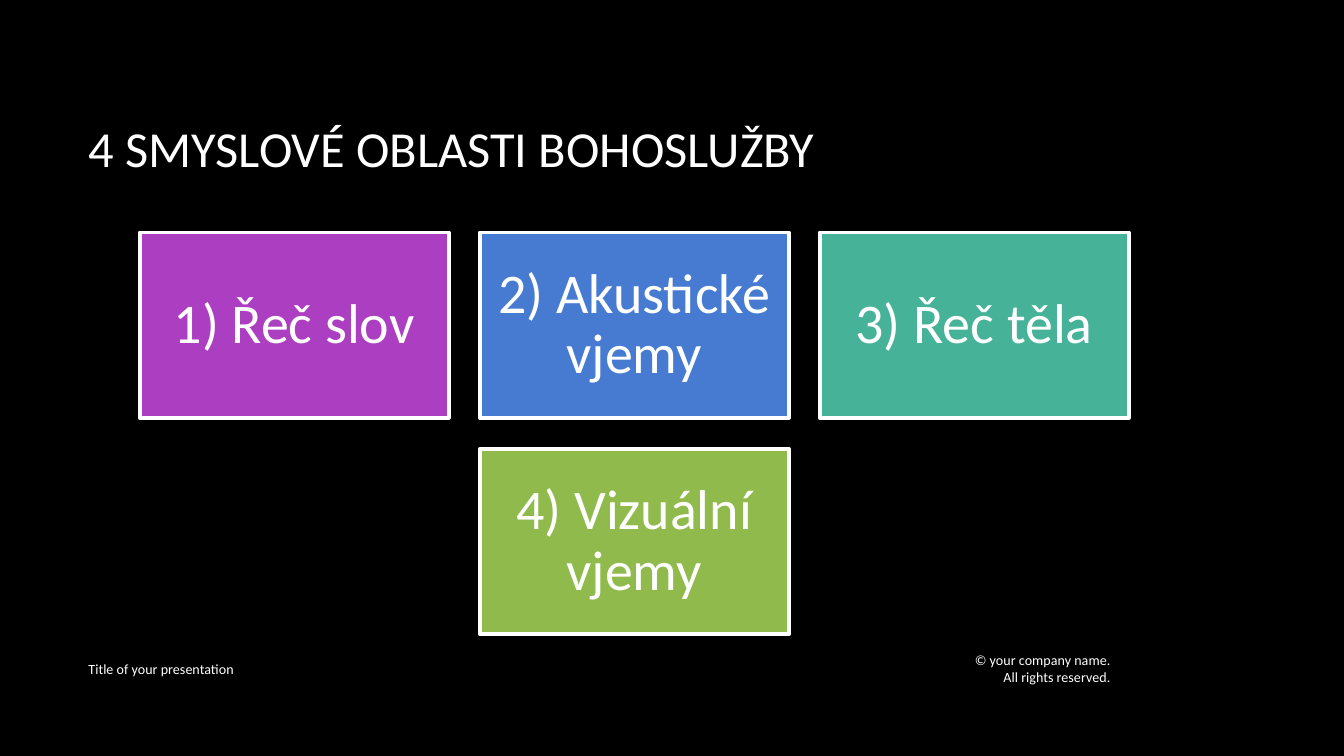
from pptx import Presentation, util as u
from pptx.dml.color import RGBColor
from pptx.enum import shapes, text

THEME = {
    "font": "Calibri", "ink": "FFFFFF", "background": "000000",
    "tiles": ["AC3EC1", "477BD1", "46B298", "90BA4C"],
    "title_size": 27, "tile_size": 30, "footer_size": 7.5,
}

# Widescreen page, 16:9
PAGE_WIDTH = 10
deck = Presentation()
deck.slide_width = u.Inches(PAGE_WIDTH)
deck.slide_height = u.Inches(PAGE_WIDTH * 9 / 16)
page = deck.slides.add_slide(deck.slide_layouts[6])
page.background.fill.solid()
page.background.fill.fore_color.rgb = RGBColor.from_string(THEME["background"])


def write(box, words, size, align, inset=(0.1, 0.05)):
    """Fill a box with one vertically centred paragraph."""
    frame = box.text_frame
    frame.word_wrap = True
    frame.vertical_anchor = text.MSO_ANCHOR.MIDDLE
    frame.margin_left = frame.margin_right = u.Inches(inset[0])
    frame.margin_top = frame.margin_bottom = u.Inches(inset[1])
    para = frame.paragraphs[0]
    para.alignment = align
    span = para.add_run()
    span.text = words
    span.font.name, span.font.size = THEME["font"], u.Pt(size)
    span.font.color.rgb = RGBColor.from_string(THEME["ink"])
    return para


# Title and footers
LEFT, FOOTER_TOP, FOOTER_HEIGHT = 0.56, 4.82, 0.31
start, end = text.PP_ALIGN.LEFT, text.PP_ALIGN.RIGHT
labels = [
    ("4 SMYSLOVÉ OBLASTI BOHOSLUŽBY", THEME["title_size"], start, (LEFT, 0.5, 8.31, 1.19)),
    ("© your company name. All rights reserved.", THEME["footer_size"], end,
     (7.05, FOOTER_TOP, 1.31, FOOTER_HEIGHT)),
    ("Title of your presentation", THEME["footer_size"], start,
     (LEFT, FOOTER_TOP, 6.42, FOOTER_HEIGHT)),
]
for words, size, align, place in labels:
    box = page.shapes.add_textbox(*map(u.Inches, place))
    write(box, words, size, align)

# Tiles: three across, the fourth centred below
GRID_LEFT, GRID_TOP = 1.04, 1.73
TILE_WIDTH, TILE_HEIGHT, GAP = 2.3, 1.38, 0.23
tiles = [("1) Řeč slov", 0, 0), ("2) Akustické vjemy", 1, 0),
         ("3) Řeč těla", 2, 0), ("4) Vizuální vjemy", 1, 1)]
for (words, column, row), colour in zip(tiles, THEME["tiles"]):
    tile = page.shapes.add_shape(
        shapes.MSO_SHAPE.RECTANGLE,
        u.Inches(GRID_LEFT + column * (TILE_WIDTH + GAP)),
        u.Inches(GRID_TOP + row * (TILE_HEIGHT + GAP)),
        u.Inches(TILE_WIDTH), u.Inches(TILE_HEIGHT))
    tile.shadow.inherit = False
    tile.fill.solid()
    tile.fill.fore_color.rgb = RGBColor.from_string(colour)
    tile.line.color.rgb = RGBColor.from_string(THEME["ink"])
    tile.line.width = u.Pt(2)
    para = write(tile, words, THEME["tile_size"], text.PP_ALIGN.CENTER, (0.12, 0.12))
    para.line_spacing = 0.9

deck.save("out.pptx")
